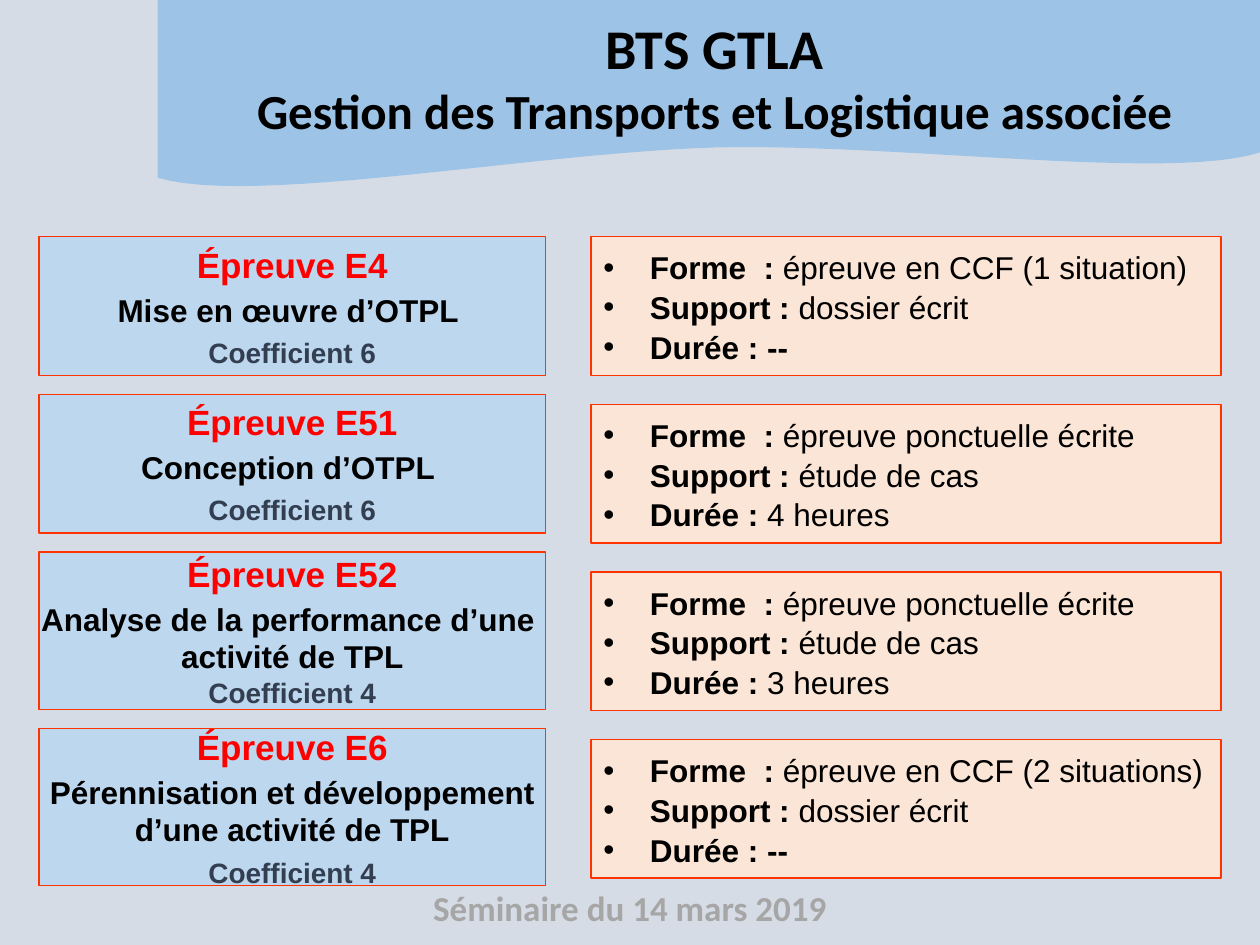
"""Build the BTS GTLA slide listing four exams with their form, support and duration."""
import dataclasses

import pptx
import pptx.dml.color
import pptx.enum.shapes
import pptx.enum.text
import pptx.oxml.ns
import pptx.util
from lxml import etree

Inches = pptx.util.Inches
Pt = pptx.util.Pt
ALIGN = pptx.enum.text.PP_ALIGN
MIDDLE = pptx.enum.text.MSO_ANCHOR.MIDDLE
RECTANGLE = pptx.enum.shapes.MSO_SHAPE.RECTANGLE


@dataclasses.dataclass(frozen=True)
class Theme:
    background: str = "D6DCE5"
    banner: str = "9DC3E6"
    exam_fill: str = "BDD7EE"
    detail_fill: str = "FBE5D6"
    border: str = "FF3300"
    red: str = "FF0000"
    black: str = "000000"
    slate: str = "333F50"
    grey: str = "A6A6A6"
    heading_font: str = "Calibri"
    body_font: str = "Arial"
    title_size: int = 32
    subtitle_size: int = 28
    exam_size: int = 20
    body_size: int = 18
    small_size: int = 16


def style(font, name, size, color, bold=True):
    font.name, font.size, font.bold = name, Pt(size), bold
    font.color.rgb = pptx.dml.color.RGBColor.from_string(color)


def add_card(left, top, width, height, fill):
    card = page.shapes.add_shape(RECTANGLE, Inches(left), Inches(top), Inches(width), Inches(height))
    card.shadow.inherit = False
    card.fill.solid()
    card.fill.fore_color.rgb = pptx.dml.color.RGBColor.from_string(fill)
    card.line.color.rgb = pptx.dml.color.RGBColor.from_string(theme.border)
    card.line.width = Pt(0.75)
    card.text_frame.word_wrap = False
    card.text_frame.vertical_anchor = MIDDLE
    return card


theme = Theme()
deck = pptx.Presentation()
deck.slide_width, deck.slide_height = Inches(10), Inches(7.5)
page = deck.slides.add_slide(deck.slide_layouts[6])
page.background.fill.solid()
page.background.fill.fore_color.rgb = pptx.dml.color.RGBColor.from_string(theme.background)

footer = page.shapes.add_textbox(Inches(2.5), Inches(6.99), Inches(5), Inches(0.44))
footer.text_frame.word_wrap = True
footer.text_frame.text = "Séminaire du 14 mars 2019"
footer.text_frame.paragraphs[0].alignment = ALIGN.CENTER
style(footer.text_frame.paragraphs[0].runs[0].font, theme.heading_font, theme.exam_size, theme.grey)

wave = [
    ((10, 1.21), (9.29, 1.44), (7.16, 1.14), (5.7, 1.17)),
    ((5.7, 1.17), (4.24, 1.21), (1.99, 1.64), (1.25, 1.41)),
]
steps = 24
outline = [(10, 0), (10, 1.21)]
for curve in wave:
    for step in range(1, steps + 1):
        t = step / steps
        weights = ((1 - t) ** 3, 3 * t * (1 - t) ** 2, 3 * t**2 * (1 - t), t**3)
        outline.append(tuple(sum(w * point[axis] for w, point in zip(weights, curve)) for axis in (0, 1)))
builder = page.shapes.build_freeform(Inches(1.25), 0)
builder.add_line_segments([(Inches(x), Inches(y)) for x, y in outline], close=True)
banner = builder.convert_to_shape()
banner.shadow.inherit = False
banner.fill.solid()
banner.fill.fore_color.rgb = pptx.dml.color.RGBColor.from_string(theme.banner)
banner.line.fill.background()

title = page.shapes.add_textbox(Inches(1.88), Inches(0.06), Inches(7.58), Inches(1.11))
title.text_frame.word_wrap = True
title.text_frame.text = "BTS GTLA\nGestion des Transports et Logistique associée"
for para, size in zip(title.text_frame.paragraphs, (theme.title_size, theme.subtitle_size)):
    para.alignment = ALIGN.CENTER
    style(para.runs[0].font, theme.heading_font, size, theme.black)

exams = [
    ("E4", ["Mise en œuvre d’OTPL "], 6, 1.1, 4, "épreuve en CCF (1 situation)", "dossier écrit", ""),
    ("E51", ["Conception d’OTPL "], 6, 1.1, 4, "épreuve ponctuelle écrite", "étude de cas", "4 heures"),
    ("E52", ["Analyse de la performance d’une ", "activité de TPL"], 4, 1.25, 0,
     "épreuve ponctuelle écrite", "étude de cas", "3 heures"),
    ("E6", ["Pérennisation et développement", "d’une activité de TPL"], 4, 1.25, 4,
     "épreuve en CCF (2 situations)", "dossier écrit", ""),
]
first_top = 1.88
exam_top = first_top
for row, (code, names, weight, height, gap, form, support, duration) in enumerate(exams):
    exam = add_card(0.31, exam_top, 4.02, height, theme.exam_fill)
    exam_top += height + 0.15
    exam.text_frame.text = "\n".join([f"Épreuve {code}", *names, f"Coefficient {weight}"])
    paras = exam.text_frame.paragraphs
    for para in paras:
        para.alignment = ALIGN.CENTER
        style(para.runs[0].font, theme.body_font, theme.body_size, theme.black)
    style(paras[0].runs[0].font, theme.body_font, theme.exam_size, theme.red)
    style(paras[-1].runs[0].font, theme.body_font, theme.small_size, theme.slate)
    paras[1].space_before = Pt(3)
    paras[-1].space_before = Pt(gap)

    detail = add_card(4.69, first_top + 1.33 * row, 5, 1.1, theme.detail_fill)
    entries = [("Forme  : ", form), ("Support : ", support), ("Durée : " if duration else "Durée : --", duration)]
    detail.text_frame.text = "\n".join(label for label, value in entries)
    for para, (label, value) in zip(detail.text_frame.paragraphs, entries):
        para.alignment = ALIGN.LEFT
        para.line_spacing = 1.05
        properties = para._p.get_or_add_pPr()
        properties.set("marL", str(Inches(0.37)))
        properties.set("indent", str(-Inches(0.37)))
        bullet_font = etree.SubElement(properties, pptx.oxml.ns.qn("a:buFont"))
        bullet_font.set("typeface", theme.body_font)
        etree.SubElement(properties, pptx.oxml.ns.qn("a:buChar")).set("char", "•")
        style(para.runs[0].font, theme.body_font, theme.body_size, theme.black)
        if value:
            span = para.add_run()
            span.text = value
            style(span.font, theme.body_font, theme.body_size, theme.black, bold=False)

deck.save("out.pptx")
